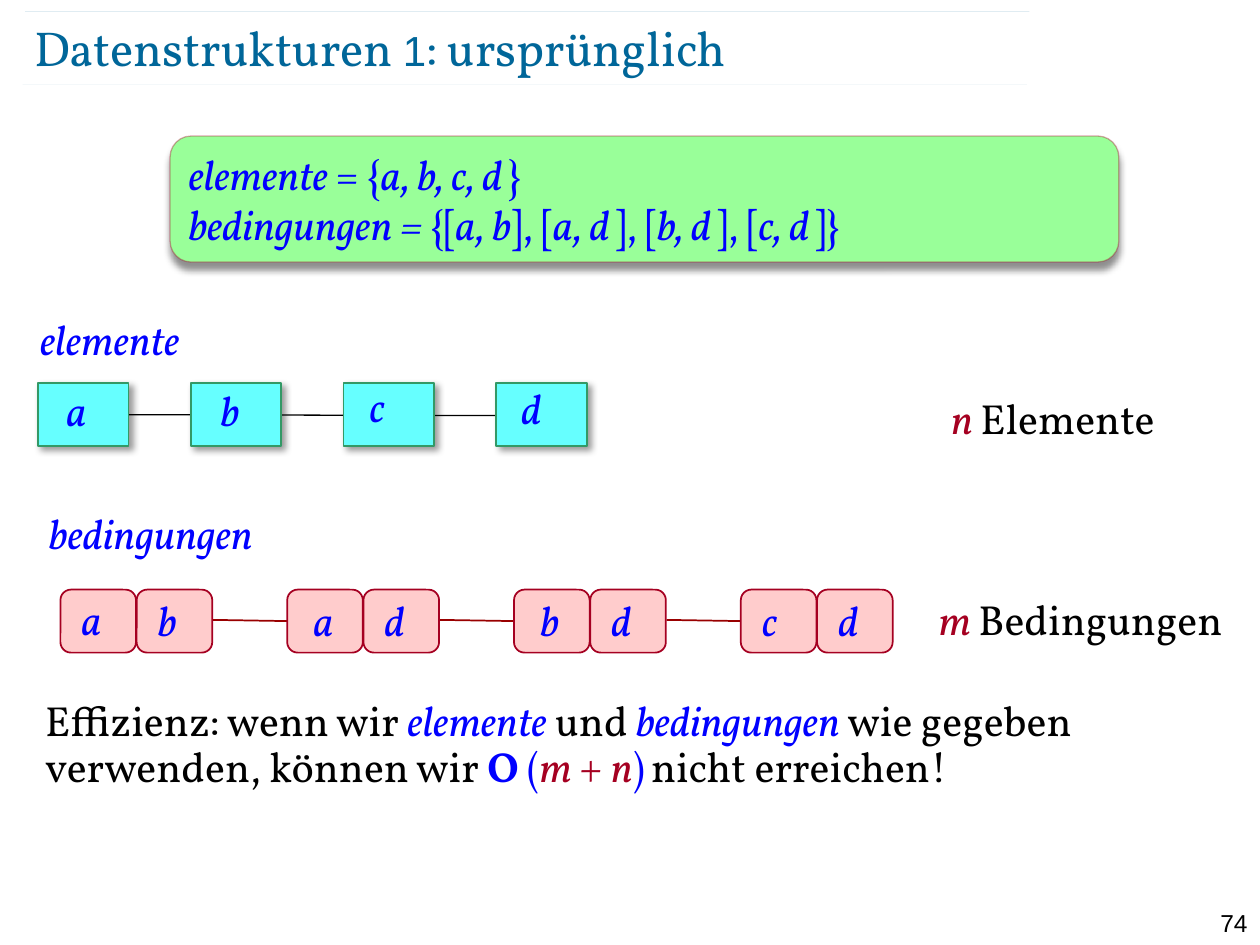
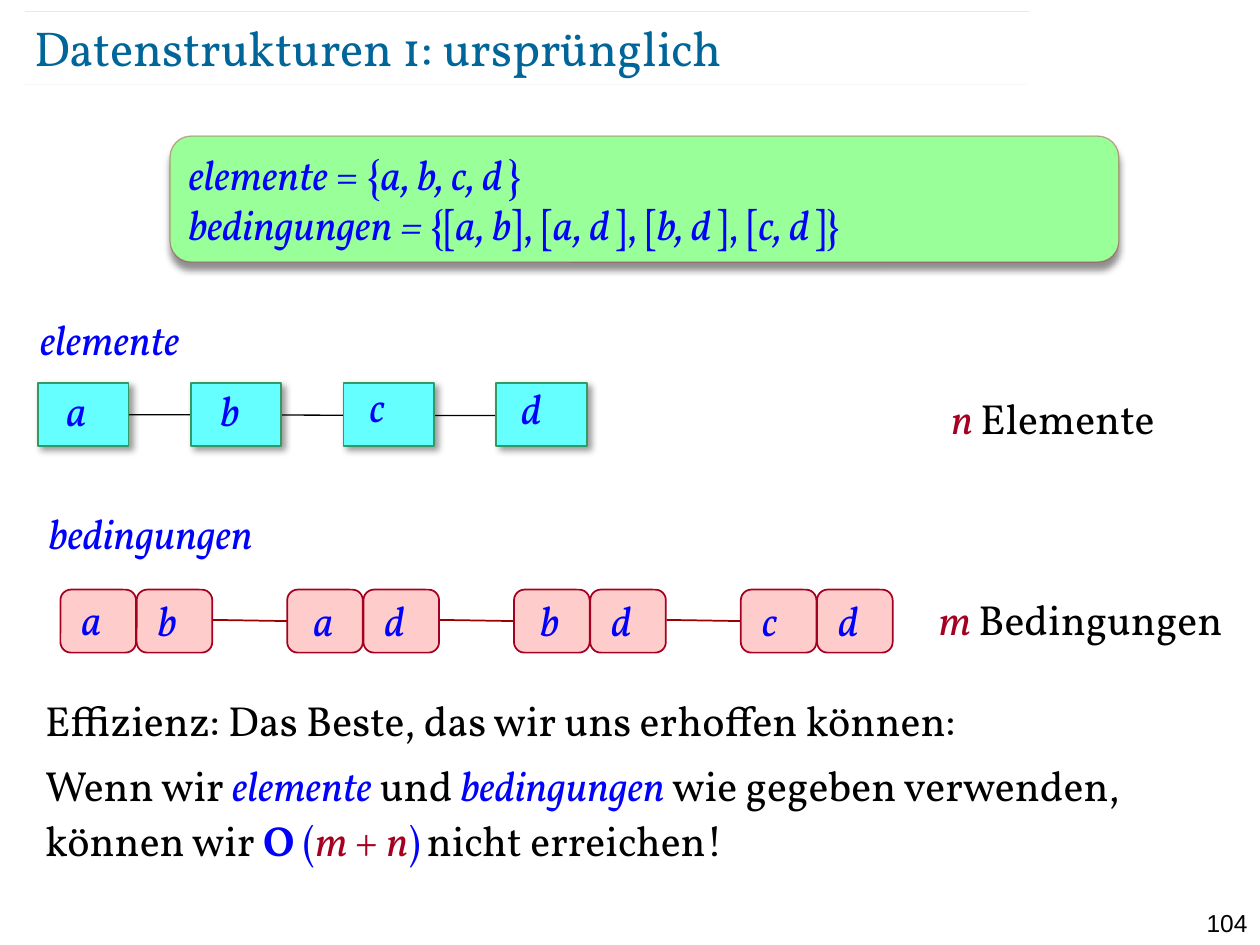
from lxml import etree
from pptx import Presentation, util as u
from pptx.dml.color import RGBColor
from pptx.enum import shapes, text
from pptx.oxml.ns import qn

SLIDE_WIDTH, SLIDE_HEIGHT = 10, 7.5
FONT = "Vollkorn"
BLACK, BLUE, RED, TEAL = "000000", "0000FF", "A50021", "006699"

STYLES = {
    "plain": {},
    "title": dict(size=28, color=TEAL),
    "digit": dict(size=24, color=TEAL, font="Arial"),
    "page": dict(size=14, font="Arial"),
    "variable": dict(color=BLUE, italic=True),
    "thin": dict(color=BLUE, italic=True, size=16),
    "symbol": dict(color=BLUE),
    "order": dict(color=BLUE, bold=True),
    "count": dict(color=RED, italic=True),
    "plus": dict(color=RED),
    "gap": dict(color=BLUE, size=18),
}

DEFINITIONS = [
    [("elemente ", "variable"), ("= {", "symbol"), ("a, b, c, d", "variable"),
     (" ", "thin"), ("}", "symbol")],
    [("bedingungen = ", "variable"), ("{[", "symbol"), ("a, b", "variable"),
     ("], [", "symbol"), ("a, d", "variable"), (" ", "thin"),
     ("], [", "symbol"), ("b, d", "variable"), (" ", "thin"),
     ("], [", "symbol"), ("c, d", "variable"), (" ", "thin"), ("]}", "symbol")],
]
ELEMENTS = [("a", 0.13, -0.04), ("b", 0.14, -0.04), ("c", 0.11, -0.07), ("d", 0.1, -0.05)]
CONDITIONS = [
    [("a", 0.07, -0.02), ("b", 0.07, -0.01)],
    [("a", 0.11, -0.01), ("d", 0.07, -0.01)],
    [("b", 0.11, -0.01), ("d", 0.07, -0.01)],
    [("c", 0.07, -0.01), ("d", 0.07, -0.01)],
]
CAPTIONS = [
    ((0.22, 2.44, 1.9, 0.5), [("elemente", "variable")]),
    ((0.29, 3.98, 2.19, 0.5), [("bedingungen", "variable")]),
    ((7.45, 3.07, 2.18, 0.5), [("n ", "count"), ("Elemente", "plain")]),
    ((7.35, 4.66, 2.65, 0.5), [("m ", "count"), ("Bedingungen", "plain")]),
]
GIVEN = [
    ("elemente", "variable"), (" und ", "plain"), ("bedingungen ", "variable"),
    ("wie gegeben verwenden, können wir ", "plain"), ("O ", "order"),
    ("(", "symbol"), ("m ", "count"), ("+ ", "plus"), ("n", "count"),
    (")", "symbol"), (" ", "gap"), ("nicht erreichen!", "plain"),
]
SLIDES = [
    dict(page="74",
         title=[("Datenstrukturen ", "title"), ("1", "digit"), (": ursprünglich", "title")],
         efficiency=[[("Effizienz: wenn wir ", "plain")] + GIVEN],
         spacing=[0.9], height=0.83),
    dict(page="104",
         title=[("Datenstrukturen 1: ursprünglich", "title")],
         efficiency=[[("Effizienz: Das Beste, das wir uns erhoffen können:", "plain")],
                     [("Wenn wir ", "plain")] + GIVEN],
         spacing=[0.9, 1.1], height=1.43),
]

RULE_LEFTS_AND_TOPS = [(0.18, 0.67), (0.2, 0.09)]
RULE_LENGTH = 7.97
ELEMENT_LEFT, ELEMENT_TOP, ELEMENT_WIDTH, ELEMENT_PITCH = 0.3, 3.04, 0.72, 1.213
PAIR_LEFT, PAIR_TOP, PAIR_PITCH = 0.48, 4.68, 1.8
CELL_WIDTH, CELL_STEP, CELL_HEIGHT = 0.6, 0.605, 0.5


def rgb(color):
    return RGBColor.from_string(color)


def inches(*lengths):
    return [u.Inches(length) for length in lengths]


def add_run(paragraph, content, size=24, color=BLACK, font=FONT, bold=False, italic=False):
    run = paragraph.add_run()
    run.text = content
    run.font.name, run.font.size = font, u.Pt(size)
    run.font.bold, run.font.italic = bold, italic
    run.font.color.rgb = rgb(color)


def write(shape, paragraphs, align=text.PP_ALIGN.LEFT, anchor=text.MSO_ANCHOR.TOP,
          spacing=None, margin=None, grow=False):
    frame = shape.text_frame
    frame.word_wrap = True
    frame.auto_size = (text.MSO_AUTO_SIZE.SHAPE_TO_FIT_TEXT if grow
                       else text.MSO_AUTO_SIZE.NONE)
    frame.vertical_anchor = anchor
    if margin is not None:
        frame.margin_left = frame.margin_right = u.Inches(margin)
        frame.margin_top = frame.margin_bottom = u.Inches(margin)
    for index, runs in enumerate(paragraphs):
        paragraph = frame.add_paragraph() if index else frame.paragraphs[0]
        paragraph.alignment = align
        paragraph.space_before = u.Pt(4.8 if index and spacing else 0)
        paragraph.line_spacing = spacing[index] if spacing else 1.0
        for content, style in runs:
            add_run(paragraph, content, **STYLES[style])


def add_text(slide, box, paragraphs, **format):
    write(slide.shapes.add_textbox(*inches(*box)), paragraphs, **format)


def style_line(shape, color, width, opacity=100):
    shape.line.color.rgb = rgb(color)
    shape.line.width = u.Pt(width)
    if opacity < 100:
        line_color = shape.element.spPr.find(qn("a:ln")).find(".//" + qn("a:srgbClr"))
        etree.SubElement(line_color, qn("a:alpha"), val=str(opacity * 1000))


def add_line(slide, start, end, color, width, opacity=100):
    line = slide.shapes.add_connector(shapes.MSO_CONNECTOR.STRAIGHT, *inches(*start, *end))
    style_line(line, color, width, opacity)
    etree.SubElement(line.element.spPr, qn("a:effectLst"))


def add_box(slide, kind, box, fill, line, width, opacity=100, shadow=None):
    shape = slide.shapes.add_shape(kind, *inches(*box))
    shape.fill.solid()
    shape.fill.fore_color.rgb = rgb(fill)
    style_line(shape, line, width, opacity)
    shape.shadow.inherit = False
    if shadow:
        strength, blur, distance, angle = shadow
        effects = shape.element.spPr.find(qn("a:effectLst"))
        outer = etree.SubElement(effects, qn("a:outerShdw"), blurRad=str(u.Pt(blur)),
                                 dist=str(u.Pt(distance)), dir=str(angle * 60000),
                                 algn="ctr", rotWithShape="0")
        shade = etree.SubElement(outer, qn("a:srgbClr"), val=BLACK)
        etree.SubElement(shade, qn("a:alpha"), val=str(strength * 1000))
    return shape


def add_letter(slide, left, top, letter, shift_x, shift_y):
    box = (left + shift_x, top + shift_y, CELL_WIDTH, CELL_HEIGHT)
    add_text(slide, box, [[(letter, "variable")]], grow=True)


def add_frame(slide, title, page):
    for left, top in RULE_LEFTS_AND_TOPS:
        add_line(slide, (left, top), (left + RULE_LENGTH, top), TEAL, 0.1, 35)
    heading = slide.shapes.title
    heading.left, heading.top, heading.width, heading.height = inches(0.27, 0.13, 8.69, 0.48)
    write(heading, [title], anchor=text.MSO_ANCHOR.MIDDLE, margin=0)
    add_text(slide, (9.25, 7.16, 0.75, 0.24), [[(page, "page")]], align=text.PP_ALIGN.RIGHT)


def add_elements(slide):
    lefts = [ELEMENT_LEFT + index * ELEMENT_PITCH for index in range(len(ELEMENTS))]
    middle = ELEMENT_TOP + CELL_HEIGHT / 2
    add_line(slide, (0.49, middle), (lefts[-1] + ELEMENT_WIDTH, middle + 0.01), BLACK, 0.75)
    for left, element in zip(lefts, ELEMENTS):
        add_box(slide, shapes.MSO_SHAPE.RECTANGLE,
                (left, ELEMENT_TOP, ELEMENT_WIDTH, CELL_HEIGHT),
                "66FFFF", "339966", 1, shadow=(40, 4, 3, 45))
        add_letter(slide, left, ELEMENT_TOP, *element)


def add_conditions(slide):
    lefts = [PAIR_LEFT + index * PAIR_PITCH for index in range(len(CONDITIONS))]
    middle = PAIR_TOP + CELL_HEIGHT / 2
    for left, following in zip(lefts, lefts[1:]):
        add_line(slide, (left + 2 * CELL_STEP, middle - 0.01), (following + 0.04, middle),
                 "990000", 1)
    for pair_left, condition in zip(lefts, CONDITIONS):
        for index, element in enumerate(condition):
            left = pair_left + index * CELL_STEP
            add_box(slide, shapes.MSO_SHAPE.ROUNDED_RECTANGLE,
                    (left, PAIR_TOP, CELL_WIDTH, CELL_HEIGHT), "FFCCCC", RED, 1)
            add_letter(slide, left, PAIR_TOP, *element)


def build_slide(presentation, content):
    slide = presentation.slides.add_slide(presentation.slide_layouts[5])
    add_frame(slide, content["title"], content["page"])
    definitions = add_box(slide, shapes.MSO_SHAPE.ROUNDED_RECTANGLE, (1.35, 1.08, 7.53, 1),
                          "99FF99", RED, 0.75, 34, shadow=(43, 4, 4, 90))
    write(definitions, DEFINITIONS)
    add_text(slide, (0.26, 5.51, 9.56, content["height"]), content["efficiency"],
             spacing=content["spacing"], grow=True)
    add_conditions(slide)
    add_elements(slide)
    for box, runs in CAPTIONS:
        add_text(slide, box, [runs], grow=True)


def main():
    presentation = Presentation()
    presentation.slide_width, presentation.slide_height = inches(SLIDE_WIDTH, SLIDE_HEIGHT)
    for content in SLIDES:
        build_slide(presentation, content)
    presentation.save("out.pptx")


if __name__ == "__main__":
    main()
